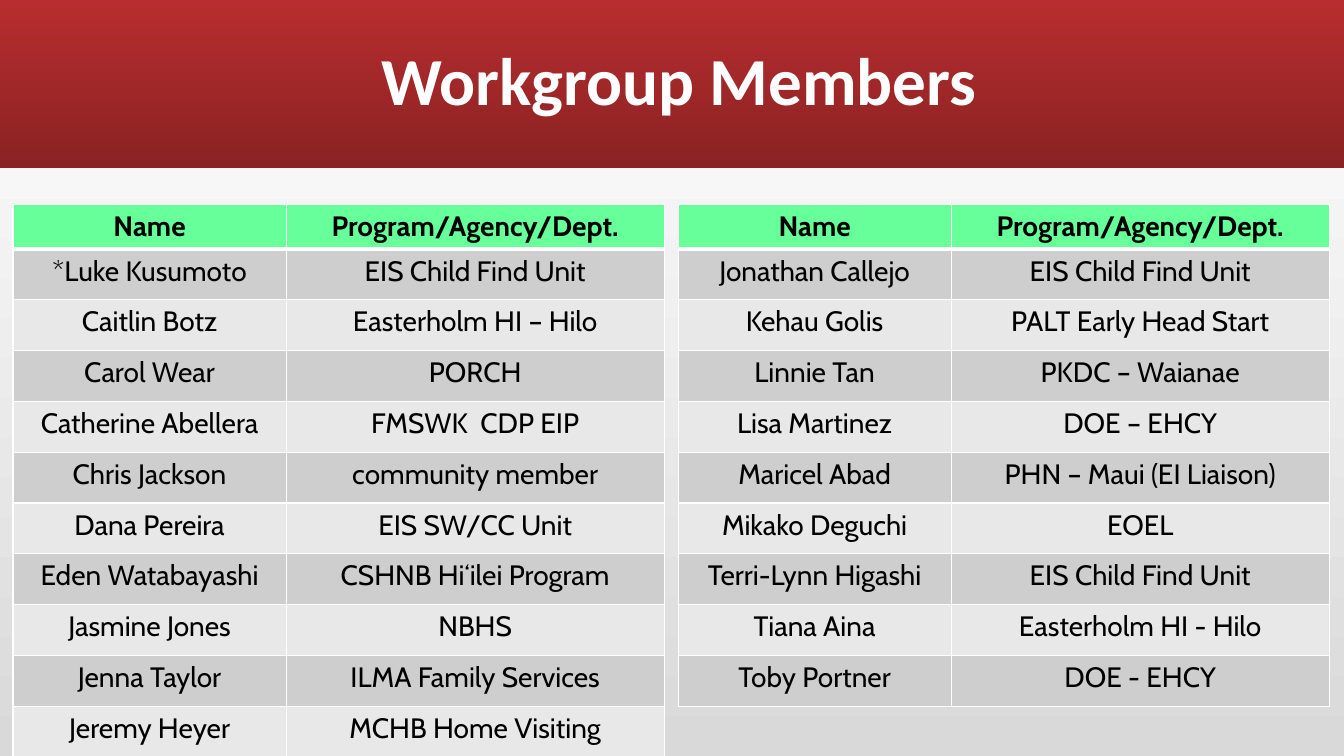
from lxml.etree import SubElement
from pptx import Presentation
from pptx.dml.color import RGBColor
from pptx.enum.shapes import MSO_SHAPE as Shape
from pptx.enum.text import MSO_ANCHOR as Anchor, PP_ALIGN as Align
from pptx.oxml.ns import qn
from pptx.util import Cm, Pt

TITLE = "Workgroup Members"
HEADER = ("Name", "Program/Agency/Dept.")
LEFT_MEMBERS = [
    ("*Luke Kusumoto", "EIS Child Find Unit"),
    ("Caitlin Botz", "Easterholm HI – Hilo"),
    ("Carol Wear", "PORCH"),
    ("Catherine Abellera", "FMSWK  CDP EIP"),
    ("Chris Jackson", "community member"),
    ("Dana Pereira", "EIS SW/CC Unit"),
    ("Eden Watabayashi", "CSHNB Hi‘ilei Program"),
    ("Jasmine Jones", "NBHS"),
    ("Jenna Taylor", "ILMA Family Services"),
    ("Jeremy Heyer", "MCHB Home Visiting"),
]
RIGHT_MEMBERS = [
    ("Jonathan Callejo", "EIS Child Find Unit"),
    ("Kehau Golis", "PALT Early Head Start"),
    ("Linnie Tan", "PKDC – Waianae"),
    ("Lisa Martinez", "DOE – EHCY"),
    ("Maricel Abad", "PHN – Maui (EI Liaison)"),
    ("Mikako Deguchi", "EOEL"),
    ("Terri-Lynn Higashi", "EIS Child Find Unit"),
    ("Tiana Aina", "Easterholm HI - Hilo"),
    ("Toby Portner", "DOE - EHCY"),
]
COLORS = {
    "bg_bottom": "D9D9D9", "bg_top": "FFFFFF",
    "banner_top": "B82D2F", "banner_bottom": "8A2223",
    "header": "66FF99", "odd": "CECECE", "even": "E8E8E8",
    "text": "000000", "white": "FFFFFF",
}
SLIDE_W, SLIDE_H = Cm(33.87), Cm(19.05)
TABLE_LEFTS, TABLE_TOP = (Cm(0.33), Cm(17.09)), Cm(5.16)
COL_WIDTHS = (Cm(6.88), Cm(9.53))
HEADER_H, ROW_H = Cm(1.09), Cm(1.28)


def rgb(name):
    return RGBColor.from_string(COLORS[name])


def fill_gradient(fill, angle, *names):
    fill.gradient()
    fill.gradient_angle = angle
    for stop, name in zip(fill.gradient_stops, names):
        stop.color.rgb = rgb(name)


def style_text(tf, font, size, color, bold):
    p = tf.paragraphs[0]
    p.alignment = Align.CENTER
    for r in p.runs:
        r.font.name, r.font.size, r.font.bold = font, Pt(size), bold
        r.font.color.rgb = rgb(color)


def set_borders(cell, widths):
    """Draw white borders; widths maps each side (L, R, T, B) to points."""
    tcPr = cell._tc.get_or_add_tcPr()
    for i, (side, width) in enumerate(widths.items()):
        ln = SubElement(tcPr, qn(f"a:ln{side}"), w=str(Pt(width)))
        solid = SubElement(ln, qn("a:solidFill"))
        SubElement(solid, qn("a:srgbClr"), val=COLORS["white"])
        tcPr.insert(i, ln)


def add_member_table(s, left, members):
    rows = [HEADER, *members]
    height = HEADER_H + ROW_H * len(members)
    table = s.shapes.add_table(len(rows), len(HEADER), left, TABLE_TOP,
                               sum(COL_WIDTHS), height).table
    for column, width in zip(table.columns, COL_WIDTHS):
        column.width = width
    for i, texts in enumerate(rows):
        is_header = i == 0
        table.rows[i].height = HEADER_H if is_header else ROW_H
        fill = "header" if is_header else "odd" if i % 2 else "even"
        for j, text in enumerate(texts):
            cell = table.cell(i, j)
            cell.text_frame.text = text
            style_text(cell.text_frame, "Cabin", 20, "text", is_header)
            cell.fill.solid()
            cell.fill.fore_color.rgb = rgb(fill)
            set_borders(cell, {"L": 1, "R": 1, "T": 3 if i == 1 else 1,
                               "B": 3 if is_header else 1})


def main():
    prs = Presentation()
    prs.slide_width, prs.slide_height = SLIDE_W, SLIDE_H
    s = prs.slides.add_slide(prs.slide_layouts[5])
    fill_gradient(s.background.fill, 90, "bg_bottom", "bg_top")

    banner = s.shapes.add_shape(Shape.RECTANGLE, 0, 0, SLIDE_W, Cm(4.23))
    banner.shadow.inherit = False
    banner.line.fill.background()
    fill_gradient(banner.fill, 270, "banner_top", "banner_bottom")

    title = s.shapes.title
    banner._element.addnext(title._element)  # title in front of the banner
    title.left, title.top = Cm(1.02), Cm(0.28)
    title.width, title.height = Cm(32.18), Cm(3.68)
    title.text_frame.text = TITLE
    title.text_frame.vertical_anchor = Anchor.MIDDLE
    title.text_frame.paragraphs[0].line_spacing = 0.9
    style_text(title.text_frame, "Calibri", 48, "white", True)

    for left, members in zip(TABLE_LEFTS, (LEFT_MEMBERS, RIGHT_MEMBERS)):
        add_member_table(s, left, members)
    prs.save("out.pptx")


if __name__ == "__main__":
    main()
